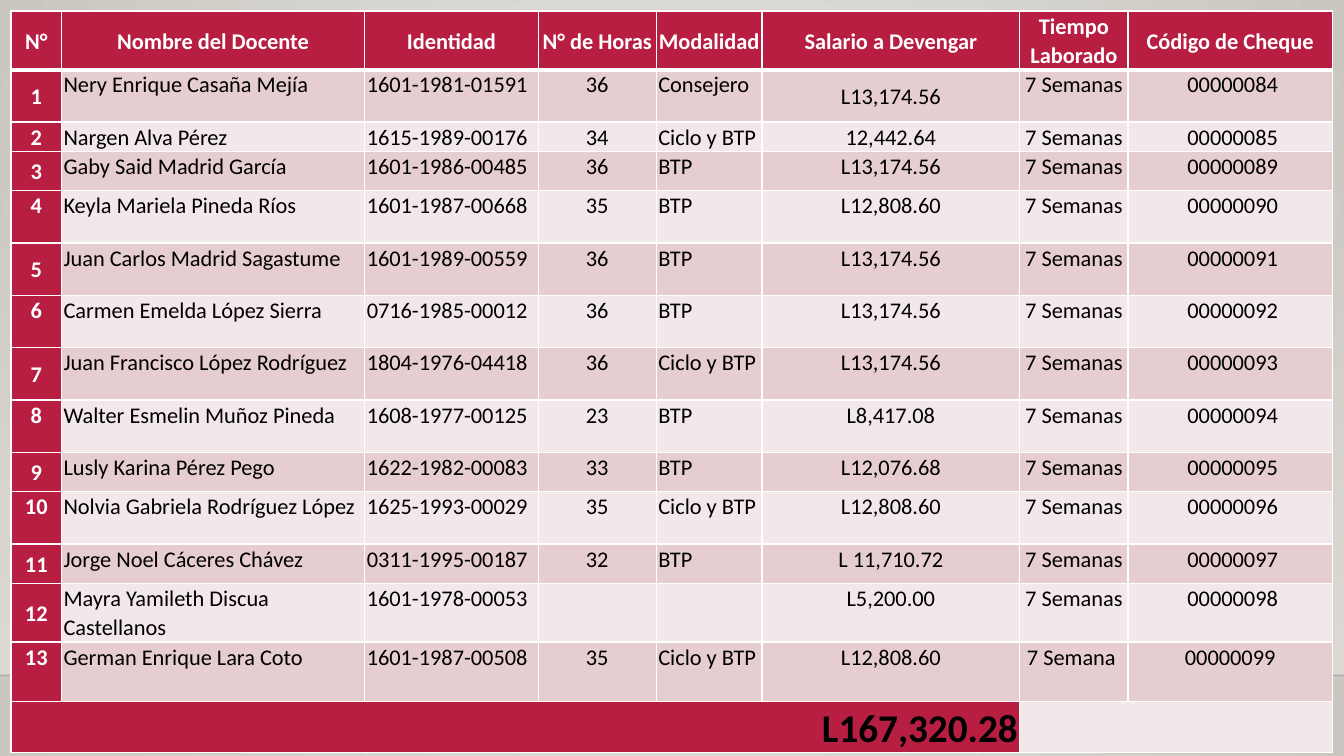
from typing import NamedTuple

from lxml import etree
from pptx import Presentation
from pptx.dml.color import RGBColor
from pptx.enum.shapes import MSO_CONNECTOR, MSO_SHAPE
from pptx.enum.text import MSO_ANCHOR, PP_ALIGN
from pptx.oxml import parse_xml
from pptx.oxml.ns import nsdecls, qn
from pptx.util import Pt

LEFT, CENTER, RIGHT = PP_ALIGN.LEFT, PP_ALIGN.CENTER, PP_ALIGN.RIGHT
TOP, MIDDLE = MSO_ANCHOR.TOP, MSO_ANCHOR.MIDDLE
RECTANGLE, STRAIGHT = MSO_SHAPE.RECTANGLE, MSO_CONNECTOR.STRAIGHT

CRIMSON = RGBColor(0xB7, 0x1E, 0x42)
ROSE = RGBColor(0xE6, 0xCD, 0xCF)
PALE_ROSE = RGBColor(0xF3, 0xE8, 0xE9)
WHITE = RGBColor(0xFF, 0xFF, 0xFF)
BLACK = RGBColor(0, 0, 0)
FLOOR_LINE = RGBColor(0, 0, 1)
BACKDROP_CENTER = RGBColor(0xEC, 0xEA, 0xE7)
BACKDROP_EDGE = RGBColor(0xCA, 0xC7, 0xC1)
WALL = RGBColor(0xDF, 0xDB, 0xD5)

SLIDE_WIDTH, SLIDE_HEIGHT = 960, 540
WALL_TOP, FLOOR_TOP = 159.1, 482.4
TABLE_LEFT, TABLE_TOP, TABLE_HEIGHT = 7.9, 7.9, 554.4
THIN, THICK = 1, 3
TALL, SHORT = 37.4, 28.1
ROW_HEIGHTS = [25.2, TALL, 18.7, SHORT, TALL, TALL, TALL, TALL, TALL, SHORT,
               TALL, SHORT, TALL, 42.5, 11.5]
MIDDLE_NUMBERS = {1, 3, 5, 7, 9, 11, 12}


class Column(NamedTuple):
    title: str
    width: float
    align: PP_ALIGN


class Teacher(NamedTuple):
    name: str
    identity: str
    hours: str
    mode: str
    salary: str
    cheque: str
    period: str = "7 Semanas"
    salary_anchor: MSO_ANCHOR = TOP


COLUMNS = [
    Column("N°", 36, CENTER),
    Column("Nombre del Docente", 216.6, LEFT),
    Column("Identidad", 124, LEFT),
    Column("N° de Horas", 84.3, CENTER),
    Column("Modalidad", 75.5, LEFT),
    Column("Salario a Devengar", 184.2, CENTER),
    Column("Tiempo Laborado", 77.3, CENTER),
    Column("Código de Cheque", 146, CENTER),
]
SALARY_COLUMN = 5

TEACHERS = [
    Teacher("Nery Enrique Casaña Mejía", "1601-1981-01591", "36", "Consejero", "L13,174.56",
            " 00000084", salary_anchor=MIDDLE),
    Teacher("Nargen Alva Pérez", "1615-1989-00176", "34", "Ciclo y BTP", "12,442.64", " 00000085"),
    Teacher("Gaby Said Madrid García", "1601-1986-00485", "36", "BTP", "L13,174.56", " 00000089"),
    Teacher("Keyla Mariela Pineda Ríos", "1601-1987-00668", "35", "BTP", "L12,808.60", " 00000090"),
    Teacher("Juan Carlos Madrid Sagastume", "1601-1989-00559", "36", "BTP", "L13,174.56",
            " 00000091"),
    Teacher("Carmen Emelda López Sierra", "0716-1985-00012", "36", "BTP", "L13,174.56",
            " 00000092"),
    Teacher("Juan Francisco López Rodríguez", "1804-1976-04418", "36", "Ciclo y BTP",
            "L13,174.56", " 00000093"),
    Teacher("Walter Esmelin Muñoz Pineda", "1608-1977-00125", "23", "BTP", "L8,417.08",
            " 00000094"),
    Teacher("Lusly Karina Pérez Pego", "1622-1982-00083", "33", "BTP", "L12,076.68", " 00000095"),
    Teacher("Nolvia Gabriela Rodríguez López", "1625-1993-00029", "35", "Ciclo y BTP",
            "L12,808.60", " 00000096"),
    Teacher("Jorge Noel Cáceres Chávez", "0311-1995-00187", "32", "BTP", "L 11,710.72",
            " 00000097"),
    Teacher("Mayra Yamileth Discua Castellanos", "1601-1978-00053", "", "", "L5,200.00",
            " 00000098"),
    Teacher("German Enrique Lara Coto", "1601-1987-00508", "35", "Ciclo y BTP", "L12,808.60",
            "00000099", period="7 Semana "),
]


def set_borders(cell, top: float = THIN, bottom: float = THIN) -> None:
    """Draw white borders; they must precede the fill in the cell properties."""
    widths = {"lnL": THIN, "lnR": THIN, "lnT": top, "lnB": bottom}
    properties = cell._tc.get_or_add_tcPr()
    for position, (side, width) in enumerate(widths.items()):
        properties.insert(position, parse_xml(
            f'<a:{side} {nsdecls("a")} w="{Pt(width)}"><a:solidFill>'
            f'<a:srgbClr val="{WHITE}"/></a:solidFill></a:{side}>'))


def write_cell(cell, text: str, *, fill: RGBColor, color: RGBColor = BLACK, size: float = 16,
               bold: bool = False, align: PP_ALIGN = LEFT, anchor: MSO_ANCHOR = TOP,
               top: float = THIN, bottom: float = THIN) -> None:
    cell.margin_left = cell.margin_right = Pt(1.5)
    cell.margin_top = cell.margin_bottom = Pt(0)
    cell.vertical_anchor = anchor
    cell.fill.solid()
    cell.fill.fore_color.rgb = fill
    set_borders(cell, top, bottom)
    paragraph = cell.text_frame.paragraphs[0]
    paragraph.alignment = align
    paragraph.line_spacing = 1.07
    if text:
        run = paragraph.add_run()
        run.text = text
        run.font.name = "Calibri"
        run.font.size = Pt(size)
        run.font.bold = bold
        run.font.color.rgb = color


def set_gradient(fill, start: RGBColor, end: RGBColor) -> None:
    fill.gradient()
    for stop, color, position in zip(fill.gradient_stops, (start, end), (0, 1)):
        stop.color.rgb = color
        stop.position = position


def set_alpha(color_element, percent: int) -> None:
    etree.SubElement(color_element, qn("a:alpha")).set("val", str(percent * 1000))


def draw_backdrop(slide) -> None:
    set_gradient(slide.background.fill, BACKDROP_CENTER, BACKDROP_EDGE)
    gradient = slide.element.find(f".//{qn('a:gradFill')}")
    gradient.replace(gradient.find(qn("a:lin")), parse_xml(
        f'<a:path {nsdecls("a")} path="circle">'
        '<a:fillToRect l="50000" t="50000" r="50000" b="50000"/></a:path>'))

    wall = slide.shapes.add_shape(RECTANGLE, Pt(0), Pt(WALL_TOP), Pt(SLIDE_WIDTH),
                                  Pt(FLOOR_TOP - WALL_TOP))
    wall.shadow.inherit = False
    wall.line.fill.background()
    set_gradient(wall.fill, WALL, WALL)
    wall.fill.gradient_angle = 270
    set_alpha(wall.element.find(f".//{qn('a:gs')}/{qn('a:srgbClr')}"), 0)

    floor = slide.shapes.add_connector(STRAIGHT, Pt(0), Pt(FLOOR_TOP), Pt(SLIDE_WIDTH),
                                       Pt(FLOOR_TOP))
    floor.line.width = Pt(1)
    floor.line.color.rgb = FLOOR_LINE
    set_alpha(floor.element.find(f".//{qn('a:srgbClr')}"), 20)
    etree.SubElement(floor.element.spPr, qn("a:effectLst"))


def draw_payroll(slide) -> None:
    frame = slide.shapes.add_table(
        len(ROW_HEIGHTS), len(COLUMNS), Pt(TABLE_LEFT), Pt(TABLE_TOP),
        Pt(sum(column.width for column in COLUMNS)), Pt(TABLE_HEIGHT))
    payroll = frame.table
    payroll.first_row = payroll.horz_banding = False
    for row, height in zip(payroll.rows, ROW_HEIGHTS):
        row.height = Pt(height)
    for index, column in enumerate(COLUMNS):
        payroll.columns[index].width = Pt(column.width)
        write_cell(payroll.cell(0, index), column.title, fill=CRIMSON, color=WHITE, bold=True,
                   align=CENTER, anchor=MIDDLE, bottom=THICK)

    for number, teacher in enumerate(TEACHERS, start=1):
        top = THICK if number == 1 else THIN
        write_cell(payroll.cell(number, 0), str(number), fill=CRIMSON, color=WHITE, bold=True,
                   align=CENTER, anchor=MIDDLE if number in MIDDLE_NUMBERS else TOP, top=top)
        details = (teacher.name, teacher.identity, teacher.hours, teacher.mode,
                   teacher.salary, teacher.period, teacher.cheque)
        for index, detail in enumerate(details, start=1):
            write_cell(payroll.cell(number, index), detail,
                       fill=ROSE if number % 2 else PALE_ROSE, align=COLUMNS[index].align,
                       anchor=teacher.salary_anchor if index == SALARY_COLUMN else TOP, top=top)

    total_row = len(ROW_HEIGHTS) - 1
    total = payroll.cell(total_row, 0)
    total.merge(payroll.cell(total_row, SALARY_COLUMN))
    write_cell(total, "L167,320.28", fill=CRIMSON, size=28, bold=True, align=RIGHT)
    remainder = payroll.cell(total_row, SALARY_COLUMN + 1)
    remainder.merge(payroll.cell(total_row, len(COLUMNS) - 1))
    write_cell(remainder, "", fill=PALE_ROSE)
    frame.height = Pt(TABLE_HEIGHT)


def main() -> None:
    presentation = Presentation()
    presentation.slide_width, presentation.slide_height = Pt(SLIDE_WIDTH), Pt(SLIDE_HEIGHT)
    slide = presentation.slides.add_slide(presentation.slide_layouts[6])
    draw_backdrop(slide)
    draw_payroll(slide)
    presentation.save("out.pptx")


if __name__ == "__main__":
    main()
